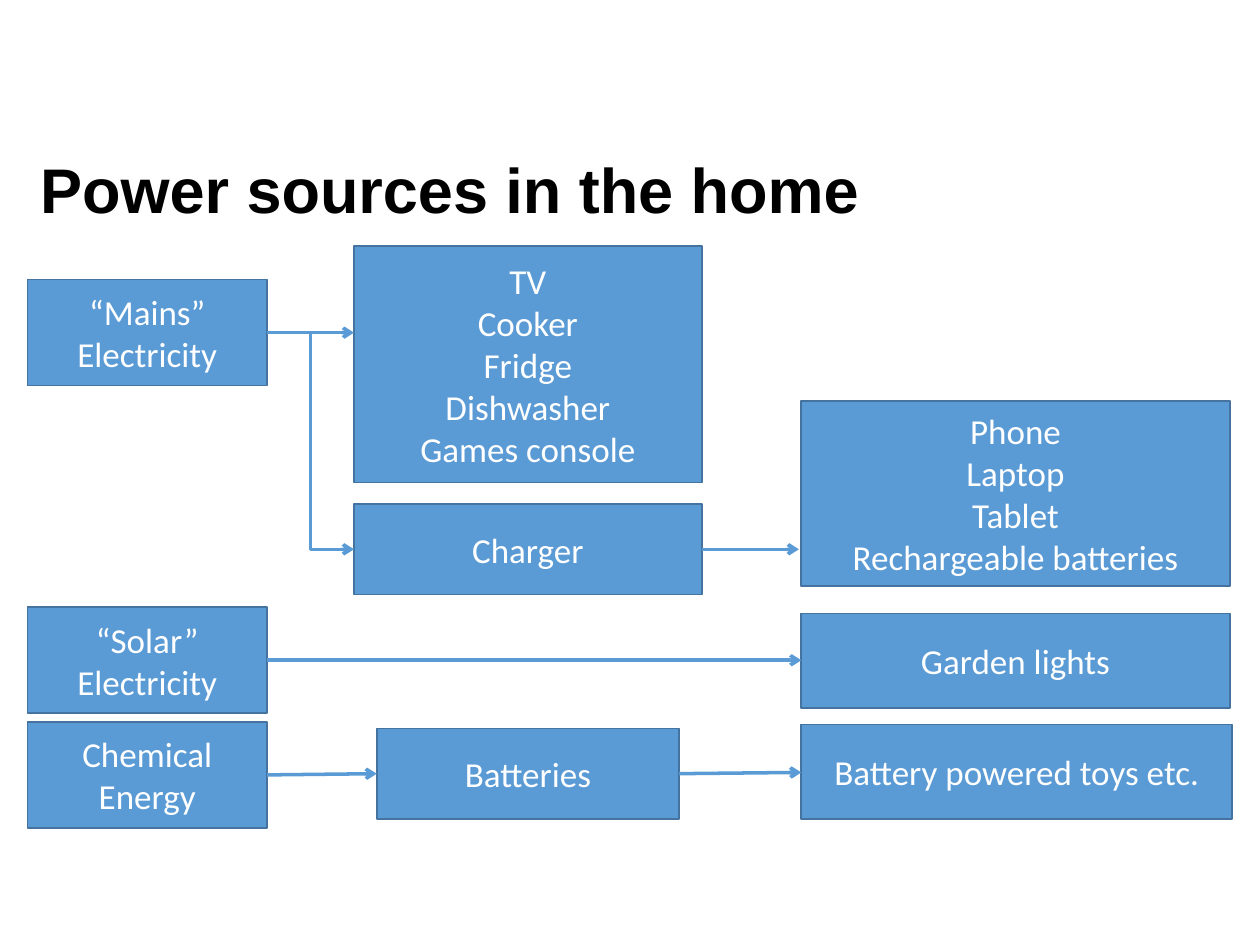
from pptx import Presentation
from pptx.dml.color import RGBColor
from pptx.enum.shapes import MSO_CONNECTOR as CONN, MSO_SHAPE
from pptx.enum.text import MSO_ANCHOR, MSO_AUTO_SIZE, PP_ALIGN
from pptx.oxml.ns import qn
from pptx.util import Pt
from lxml import etree

BLUE = RGBColor(0x5B, 0x9B, 0xD5)
DARK_BLUE = RGBColor(0x43, 0x73, 0x9E)
WHITE = RGBColor(0xFF, 0xFF, 0xFF)
BLACK = RGBColor(0, 0, 0)

prs = Presentation()
prs.slide_width, prs.slide_height = Pt(720), Pt(540)
s = prs.slides.add_slide(prs.slide_layouts[5])

# Title
title = s.shapes.title
title.left, title.top, title.width, title.height = Pt(15.8), Pt(83.5), Pt(584), Pt(53.3)
tf = title.text_frame
tf.text = "Power sources in the home"
tf.auto_size = MSO_AUTO_SIZE.NONE
tf.vertical_anchor = MSO_ANCHOR.MIDDLE
p = tf.paragraphs[0]
p.alignment = PP_ALIGN.LEFT
p.line_spacing = 0.9
font = p.runs[0].font
font.name, font.size, font.bold = "Arial", Pt(36), True
font.color.rgb = BLACK

# Columns: sources, converters, devices
SOURCE_X, SOURCE_W, SOURCE_H = 15.8, 136.8, 60.5
MAINS_X, MAINS_W = 202.3, 198.7
BATTERY_X, BATTERY_W = 215.3, 172.8
DEVICE_X, DEVICE_W = 457.9, 244.8
SOURCE_END = SOURCE_X + SOURCE_W
MAINS_END = MAINS_X + MAINS_W
BATTERY_END = BATTERY_X + BATTERY_W

# Boxes: left, top, width, height, text
boxes = [
    (SOURCE_X, 159.8, SOURCE_W, SOURCE_H, "“Mains” Electricity"),
    (MAINS_X, 140.4, MAINS_W, 135.4, "TV\nCooker\nFridge\nDishwasher\nGames console"),
    (MAINS_X, 288, MAINS_W, 51.8, "Charger"),
    (DEVICE_X, 229, DEVICE_W, 105.8, "Phone\nLaptop\nTablet\nRechargeable batteries"),
    (SOURCE_X, 347, SOURCE_W, SOURCE_H, "“Solar” Electricity"),
    (DEVICE_X, 350.6, DEVICE_W, 54, "Garden lights"),
    (DEVICE_X, 414, 246.2, 54, "Battery powered toys etc."),
    (SOURCE_X, 412.6, SOURCE_W, SOURCE_H, "Chemical Energy"),
    (BATTERY_X, 416.2, BATTERY_W, 51.8, "Batteries"),
]
for left, top, width, height, text in boxes:
    sp = s.shapes.add_shape(MSO_SHAPE.RECTANGLE, Pt(left), Pt(top), Pt(width), Pt(height))
    sp.shadow.inherit = False
    sp.fill.solid()
    sp.fill.fore_color.rgb = BLUE
    sp.line.color.rgb = DARK_BLUE
    sp.line.width = Pt(1)
    tf = sp.text_frame
    tf.text = text
    tf.word_wrap = True
    tf.vertical_anchor = MSO_ANCHOR.MIDDLE
    for p in tf.paragraphs:
        p.alignment = PP_ALIGN.CENTER
        font = p.runs[0].font
        font.name, font.size = "Calibri", Pt(20)
        font.color.rgb = WHITE

# Arrows: kind, start x, start y, end x, end y
arrows = [
    (CONN.STRAIGHT, SOURCE_END, 190.1, MAINS_X, 190.1),
    (CONN.ELBOW, SOURCE_END, 190.1, MAINS_X, 313.9),
    (CONN.STRAIGHT, MAINS_END, 313.9, 456.5, 313.9),
    (CONN.STRAIGHT, SOURCE_END, 377.3, DEVICE_X, 377.3),
    (CONN.STRAIGHT, SOURCE_END, 442.8, BATTERY_X, 442.1),
    (CONN.STRAIGHT, BATTERY_END, 442.1, DEVICE_X, 441.4),
]
for kind, x1, y1, x2, y2 in arrows:
    arrow = s.shapes.add_connector(kind, Pt(x1), Pt(y1), Pt(x2), Pt(y2))
    arrow.line.color.rgb = BLUE
    arrow.line.width = Pt(2)
    etree.SubElement(arrow.line._get_or_add_ln(), qn("a:tailEnd"), type="arrow")
    etree.SubElement(arrow._element.spPr, qn("a:effectLst"))

prs.save("out.pptx")
